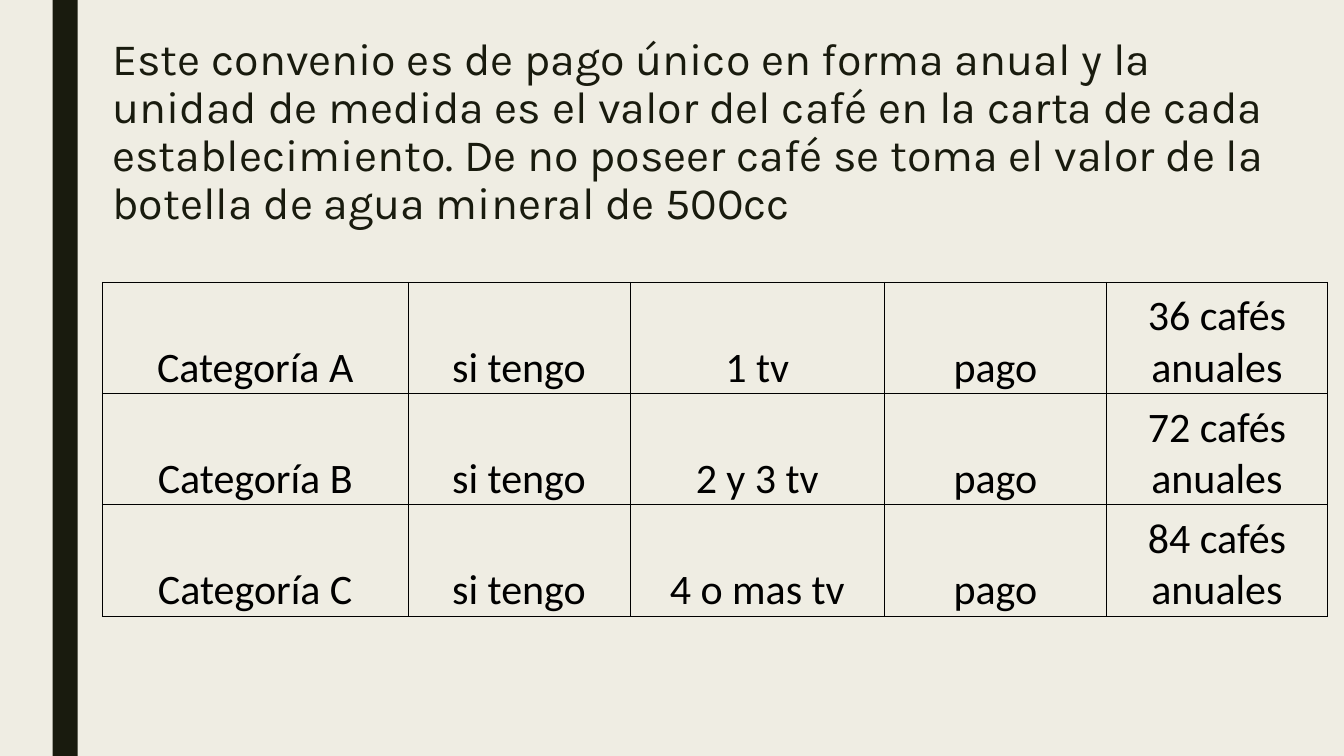
from lxml import etree
from pptx import Presentation
from pptx.dml.color import RGBColor
from pptx.enum.shapes import MSO_SHAPE
from pptx.enum.text import MSO_ANCHOR, MSO_AUTO_SIZE, PP_ALIGN
from pptx.oxml.ns import qn
from pptx.util import Pt

RECTANGLE = MSO_SHAPE.RECTANGLE
TOP, BOTTOM = MSO_ANCHOR.TOP, MSO_ANCHOR.BOTTOM
LEFT, CENTER = PP_ALIGN.LEFT, PP_ALIGN.CENTER
NO_AUTOFIT = MSO_AUTO_SIZE.NONE
TITLE_ONLY = 5

COLORS = {"paper": "EFEDE3", "dark": "191B0E", "black": "000000"}

AGREEMENT = (
    "Este convenio es de pago único en forma anual y la unidad de medida es "
    "el valor del café en la carta de cada establecimiento. De no poseer café "
    "se toma el valor de la botella de agua mineral de 500cc"
)
CATEGORIES = [("A", "1 tv", 36), ("B", "2 y 3 tv", 72), ("C", "4 o mas tv", 84)]
COLUMN_SHARES = [3.04, 2.2, 2.53, 2.2, 2.2]


def color(name):
    """Return the named colour."""
    return RGBColor.from_string(COLORS[name])


def add_span(para, text, size, font, color_name):
    """Add one formatted run to a paragraph."""
    span = para.add_run()
    span.text = text
    span.font.size = Pt(size)
    span.font.name = font
    span.font.color.rgb = color(color_name)


def add_side_bar(page, left, top, width, height):
    """Draw the dark vertical bar."""
    bar = page.shapes.add_shape(RECTANGLE, Pt(left), Pt(top), Pt(width), Pt(height))
    bar.shadow.inherit = False
    bar.fill.solid()
    bar.fill.fore_color.rgb = color("dark")
    bar.line.fill.background()


def add_title(page, left, top, width, height):
    """Place the agreement text in the title placeholder."""
    title = page.shapes.title
    title.left, title.top = Pt(left), Pt(top)
    title.width, title.height = Pt(width), Pt(height)
    frame = title.text_frame
    frame.word_wrap = True
    frame.auto_size = NO_AUTOFIT
    frame.vertical_anchor = TOP
    para = frame.paragraphs[0]
    para.alignment = LEFT
    para.line_spacing = 0.89
    add_span(para, AGREEMENT, 32, "Karla", "dark")


def add_borders(cell):
    """Draw thin black borders on all sides of a cell."""
    properties = cell._tc.get_or_add_tcPr()
    for position, side in enumerate(("a:lnL", "a:lnR", "a:lnT", "a:lnB")):
        line = etree.Element(qn(side), w=str(Pt(0.5)))
        fill = etree.SubElement(line, qn("a:solidFill"))
        etree.SubElement(fill, qn("a:srgbClr"), val=COLORS["black"])
        properties.insert(position, line)


def fill_cell(cell, text):
    """Write and format one table cell."""
    cell.fill.background()
    cell.vertical_anchor = BOTTOM
    cell.margin_left = cell.margin_right = cell.margin_top = Pt(1.5)
    cell.margin_bottom = Pt(0)
    para = cell.text_frame.paragraphs[0]
    para.alignment = CENTER
    add_span(para, text, 30, "Calibri", "black")
    add_borders(cell)


def add_price_table(page, left, top, width, height):
    """Build the table of categories and yearly payments."""
    table = page.shapes.add_table(
        len(CATEGORIES), len(COLUMN_SHARES), Pt(left), Pt(top), Pt(width), Pt(height)
    ).table
    table.first_row = table.horz_banding = False
    for column, share in zip(table.columns, COLUMN_SHARES):
        column.width = Pt(width * share / sum(COLUMN_SHARES))
    for row, (letter, screens, coffees) in zip(table.rows, CATEGORIES):
        row.height = Pt(height / len(CATEGORIES))
        texts = (f"Categoría {letter}", "si tengo", screens, "pago",
                 f"{coffees} cafés anuales")
        for cell, text in zip(row.cells, texts):
            fill_cell(cell, text)


def main():
    """Build and save the deck."""
    deck = Presentation()
    deck.slide_width, deck.slide_height = Pt(960), Pt(540)
    page = deck.slides.add_slide(deck.slide_layouts[TITLE_ONLY])
    page.background.fill.solid()
    page.background.fill.fore_color.rgb = color("paper")
    add_side_bar(page, 37.5, 0, 18, 540)
    add_title(page, 73, 23, 861, 148)
    add_price_table(page, 73, 201.5, 875.5, 238.5)
    deck.save("out.pptx")


if __name__ == "__main__":
    main()
